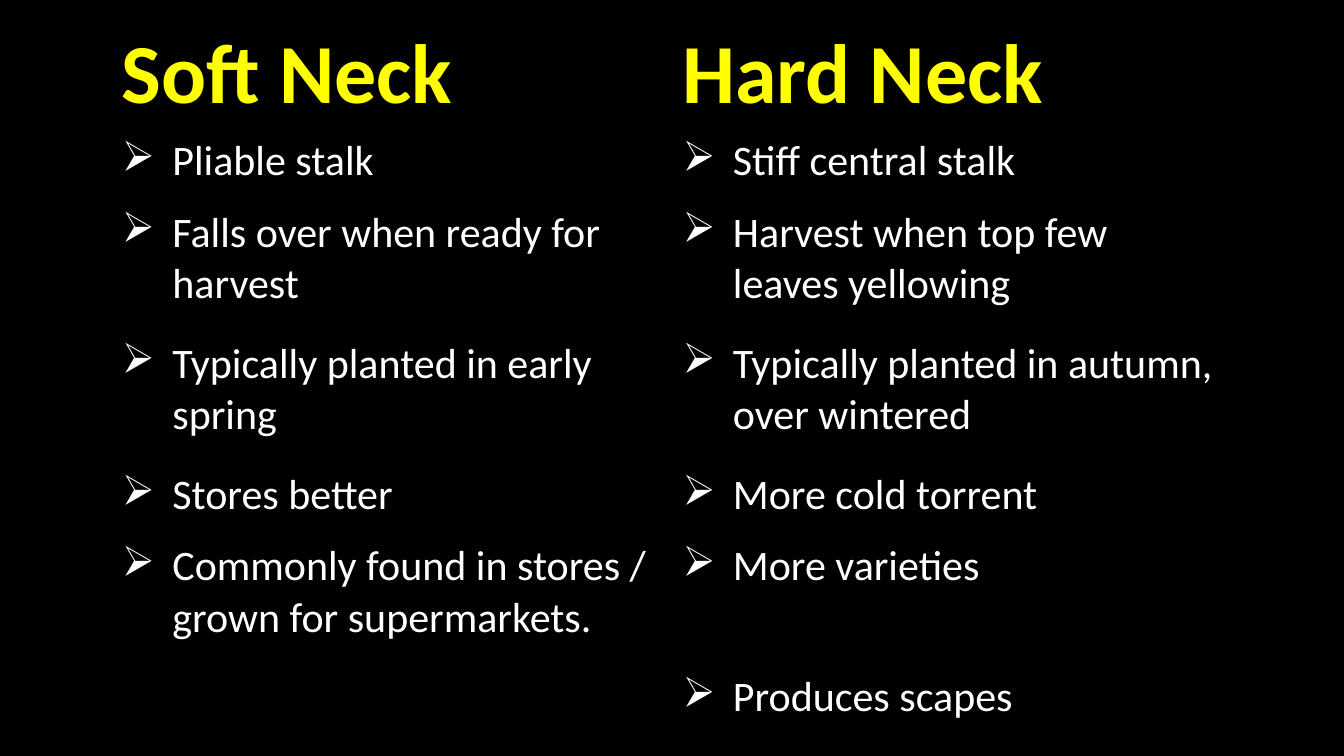
from dataclasses import dataclass

from lxml.etree import SubElement
from pptx import Presentation
from pptx.dml.color import RGBColor as RGB
from pptx.oxml.ns import qn
from pptx.util import Inches, Pt


@dataclass(frozen=True)
class Theme:
    back: RGB = RGB(0, 0, 0)
    head: RGB = RGB(255, 255, 0)
    body: RGB = RGB(255, 255, 255)
    font: str = "Calibri"
    big: int = 60
    small: int = 30
    plain: str = "{2D5ABB26-0587-4C30-8999-92F81FD0307C}"


THEME = Theme()
HEADS = ("Soft Neck", "Hard Neck")
TRAITS = (
    (0.71, "Pliable stalk", "Stiff central stalk"),
    (1.3, "Falls over when ready for harvest", "Harvest when top few leaves yellowing"),
    (1.3, "Typically planted in early spring", "Typically planted in autumn, over wintered"),
    (0.71, "Stores better", "More cold torrent"),
    (1.3, "Commonly found in stores / grown for supermarkets.", "More varieties"),
    (0.71, "", "Produces scapes"),
)


def add_bullet(para):
    props = para._p.get_or_add_pPr()
    props.set("marL", str(Inches(0.5)))
    props.set("indent", str(Inches(-0.5)))
    SubElement(props, qn("a:buChar")).set("char", "➢")


def fill_cell(cell, text, size, color, bold):
    cell.fill.background()
    if not text:
        return
    cell.text_frame.text = text
    font = cell.text_frame.paragraphs[0].runs[0].font
    font.name = THEME.font
    font.size = Pt(size)
    font.color.rgb = color
    font.bold = bold


def add_grid(slide, left, top, width, highs):
    frame = slide.shapes.add_table(
        len(highs), len(HEADS), Inches(left), Inches(top),
        Inches(width), Inches(sum(highs)))
    grid = frame.table
    grid.first_row = False
    grid.horz_banding = False
    grid._tbl.tblPr.find(qn("a:tableStyleId")).text = THEME.plain
    for col in grid.columns:
        col.width = Inches(width / len(HEADS))
    for row, high in zip(grid.rows, highs):
        row.height = Inches(high)
    return grid


def add_traits(slide):
    highs = [1.11] + [high for high, *_ in TRAITS]
    grid = add_grid(slide, 1.11, 0.18, 11.12, highs)
    for col, head in enumerate(HEADS):
        fill_cell(grid.cell(0, col), head, THEME.big, THEME.head, True)
    for row, (_, *texts) in enumerate(TRAITS, 1):
        for col, text in enumerate(texts):
            cell = grid.cell(row, col)
            fill_cell(cell, text, THEME.small, THEME.body, False)
            if text:
                add_bullet(cell.text_frame.paragraphs[0])


def main():
    deck = Presentation()
    deck.slide_width = Inches(13.33)
    deck.slide_height = Inches(7.5)
    slide = deck.slides.add_slide(deck.slide_layouts[6])
    slide.background.fill.solid()
    slide.background.fill.fore_color.rgb = THEME.back
    add_traits(slide)
    deck.save("out.pptx")


if __name__ == "__main__":
    main()
